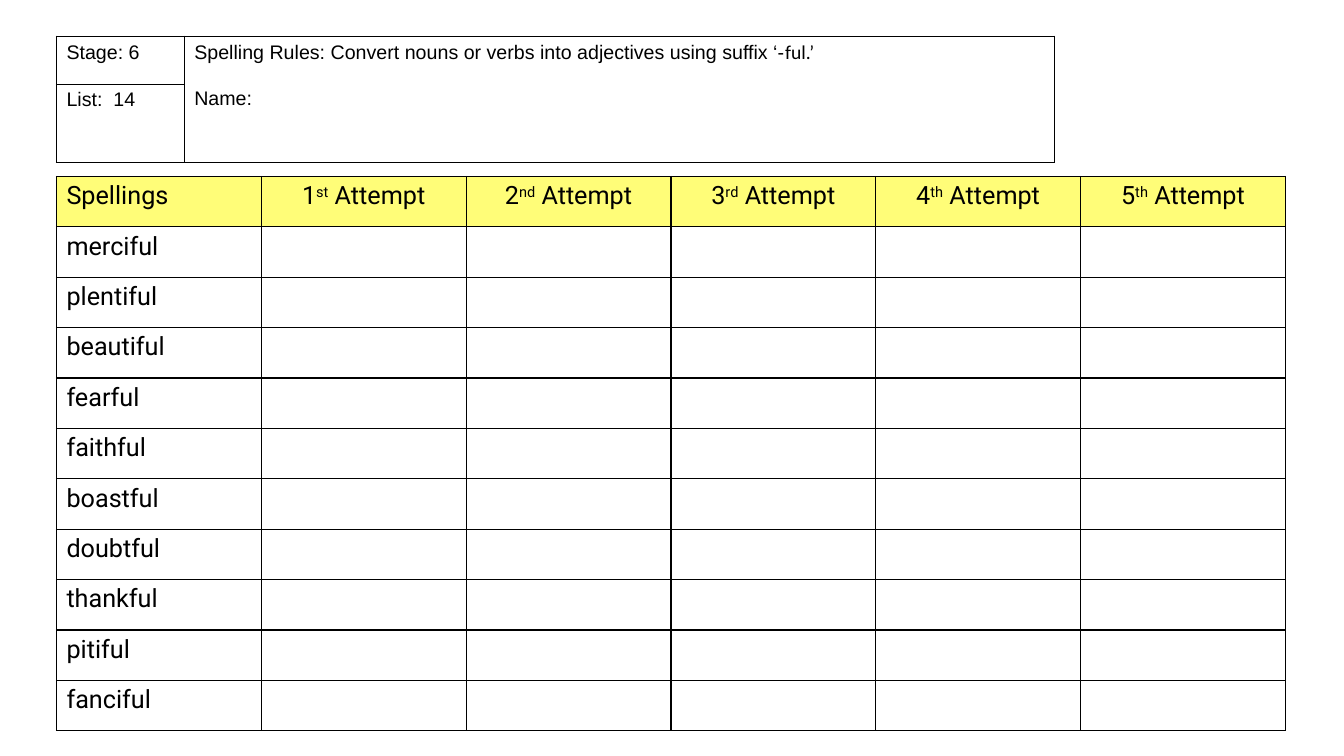
from dataclasses import dataclass

from lxml.etree import SubElement
from pptx import Presentation
from pptx.dml.color import RGBColor
from pptx.enum.text import PP_ALIGN
from pptx.oxml.ns import qn
from pptx.util import Inches, Pt


@dataclass(frozen=True)
class Theme:
    ink: str = "000000"
    heading_fill: str = "FFFD78"
    sheet_font: str = "Roboto"
    label_font: str = "Arial"
    suffix_font: str = "Calibri"
    sheet_size: int = 18
    label_size: int = 14
    border: int = 1


THEME = Theme()
SLIDE_WIDTH, SLIDE_HEIGHT = 13.33, 7.5
LEFT = 0.56

ATTEMPTS = [("1", "st"), ("2", "nd"), ("3", "rd"), ("4", "th"), ("5", "th")]
WORDS = ["merciful", "plentiful", "beautiful", "fearful", "faithful",
         "boastful", "doubtful", "thankful", "pitiful", "fanciful"]


def write(paragraph, text, font=THEME.label_font, size=THEME.label_size,
          color=THEME.ink, raised=False):
    """Append one formatted run to a paragraph."""
    run = paragraph.add_run()
    run.text = text
    run.font.name = font
    run.font.size = Pt(size)
    run.font.color.rgb = RGBColor.from_string(color)
    if raised:
        run.font._element.set("baseline", "30000")


def draw_borders(cell):
    properties = cell._tc.get_or_add_tcPr()
    for side in ("a:lnL", "a:lnR", "a:lnT", "a:lnB"):
        line = SubElement(properties, qn(side), w=str(Pt(THEME.border)))
        fill = SubElement(line, qn("a:solidFill"))
        SubElement(fill, qn("a:srgbClr"), val=THEME.ink)


def add_grid(slide, box, column_shares, row_count):
    """Add a plain bordered table with equal rows that fills the box."""
    left, top, width, height = box
    table = slide.shapes.add_table(
        row_count, len(column_shares),
        Inches(left), Inches(top), Inches(width), Inches(height)).table
    table.first_row = table.horz_banding = False
    for column, share in zip(table.columns, column_shares):
        column.width = Inches(width * share)
    for row in table.rows:
        row.height = Inches(height / row_count)
    for cell in table.iter_cells():
        draw_borders(cell)
        cell.fill.background()
    return table


def add_list_header(slide, box):
    """Stage and list number on the left, rule and name on the right."""
    table = add_grid(slide, box, (0.128, 0.872), 2)
    for row, label in enumerate(("Stage: 6", "List:  14")):
        write(table.cell(row, 0).text_frame.paragraphs[0], label)

    details = table.cell(0, 1)
    details.merge(table.cell(1, 1))
    rule = details.text_frame.paragraphs[0]
    write(rule, "Spelling Rules: Convert nouns or verbs into adjectives using suffix ‘-")
    write(rule, "ful.’", font=THEME.suffix_font)
    name = details.text_frame.add_paragraph()
    name.space_before = Pt(16)
    write(name, "Name:")


def add_spelling_sheet(slide, box):
    """One row per word, one blank column per attempt."""
    column_count = len(ATTEMPTS) + 1
    table = add_grid(slide, box, [1 / column_count] * column_count, len(WORDS) + 1)
    style = {"font": THEME.sheet_font, "size": THEME.sheet_size}

    # Words down the first column
    for row, word in enumerate(["Spellings", *WORDS]):
        write(table.cell(row, 0).text_frame.paragraphs[0], word, **style)

    # Attempt headings
    for column, (number, ending) in enumerate(ATTEMPTS, start=1):
        heading = table.cell(0, column).text_frame.paragraphs[0]
        heading.alignment = PP_ALIGN.CENTER
        write(heading, number, **style)
        write(heading, ending, raised=True, **style)
        write(heading, " Attempt", **style)

    # Heading band
    for column in range(column_count):
        fill = table.cell(0, column).fill
        fill.solid()
        fill.fore_color.rgb = RGBColor.from_string(THEME.heading_fill)


def main():
    presentation = Presentation()
    presentation.slide_width = Inches(SLIDE_WIDTH)
    presentation.slide_height = Inches(SLIDE_HEIGHT)
    slide = presentation.slides.add_slide(presentation.slide_layouts[6])
    add_spelling_sheet(slide, (LEFT, 1.75, 12.19, 5.5))
    add_list_header(slide, (LEFT, 0.36, 9.9, 0.95))
    presentation.save("out.pptx")


if __name__ == "__main__":
    main()
